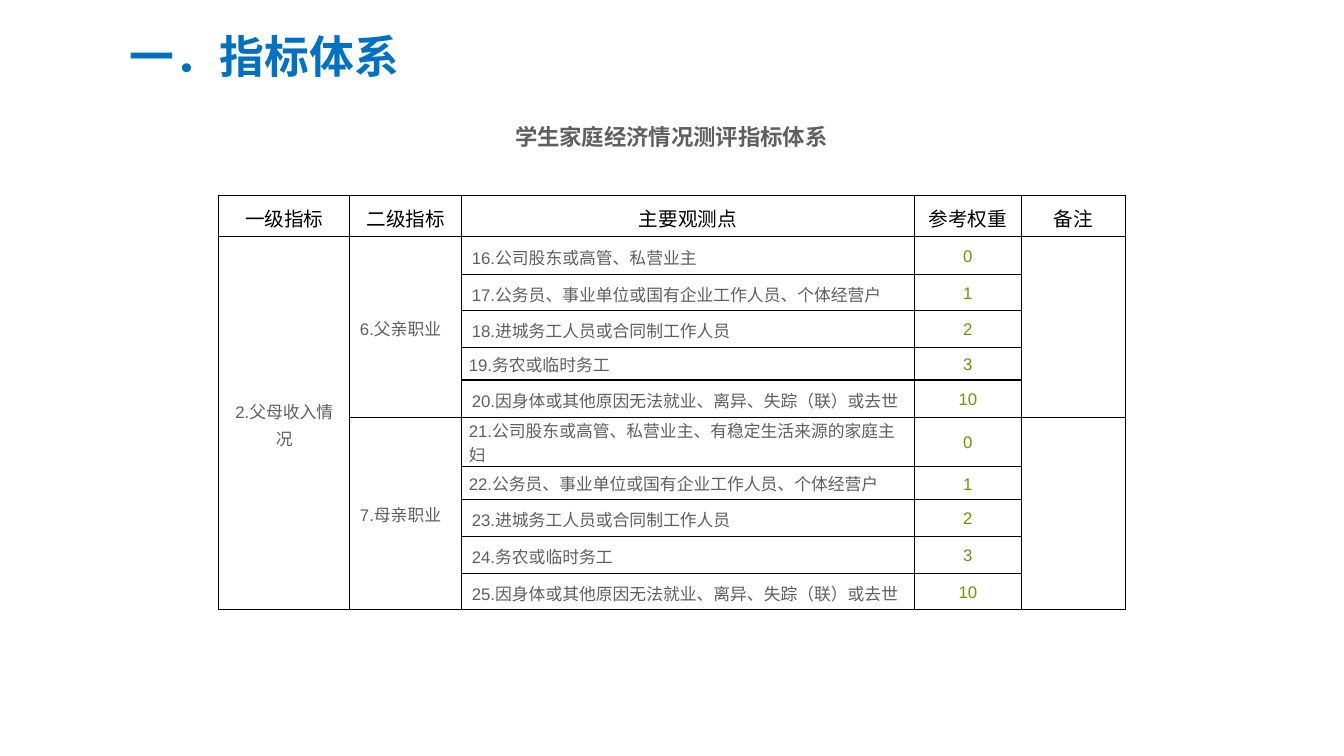
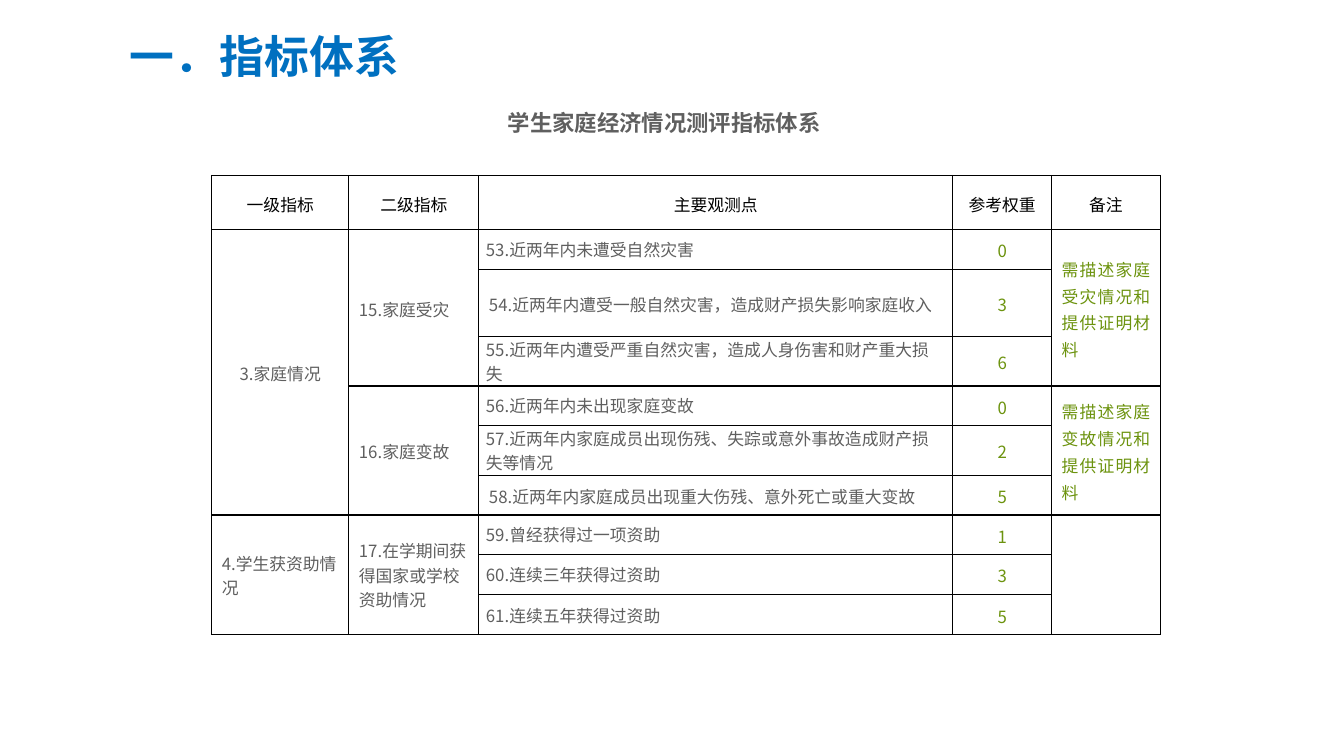
from collections import namedtuple

from lxml.etree import SubElement
from pptx import Presentation
from pptx.dml.color import RGBColor
from pptx.enum.text import MSO_ANCHOR, PP_ALIGN
from pptx.oxml.ns import qn
from pptx.util import Inches, Pt

BLUE = RGBColor(0x00, 0x70, 0xC0)
GRAY = RGBColor(0x5F, 0x5F, 0x5F)
GREEN = RGBColor(0x6C, 0x93, 0x0E)
BLACK = RGBColor(0, 0, 0)
CJK = "Noto Sans CJK SC"
LATIN = "Arial"

Style = namedtuple("Style", "align lead color tight", defaults=[False])
HEAD = Style(PP_ALIGN.CENTER, 1.1, BLACK)
MID = Style(PP_ALIGN.CENTER, 1.1, GRAY)
BODY = Style(PP_ALIGN.JUSTIFY, 1.1, GRAY)
SCORE = Style(PP_ALIGN.CENTER, 1.1, GREEN)
NOTE = Style(PP_ALIGN.JUSTIFY, 1.1, GREEN)
LEFT = Style(PP_ALIGN.LEFT, 1.0, GRAY)
TIGHT = Style(PP_ALIGN.LEFT, 1.0, GRAY, True)
COLUMNS = [MID, BODY, BODY, SCORE, NOTE]

TITLE = "一．指标体系"
CAPTION = "学生家庭经济情况测评指标体系"
HEADS = ["一级指标", "二级指标", "主要观测点", "参考权重", "备注"]

# None continues the cell above; a pair gives a cell its own style.
JOBS = [
    ["2.父母收入情况", "6.父亲职业", "16.公司股东或高管、私营业主", "0", ""],
    [None, None, "17.公务员、事业单位或国有企业工作人员、个体经营户", "1", None],
    [None, None, "18.进城务工人员或合同制工作人员", "2", None],
    [None, None, ("19.务农或临时务工", TIGHT), "3", None],
    [None, None, "20.因身体或其他原因无法就业、离异、失踪（联）或去世", "10", None],
    [None, "7.母亲职业",
     ("21.公司股东或高管、私营业主、有稳定生活来源的家庭主妇", TIGHT), "0", ""],
    [None, None,
     ("22.公务员、事业单位或国有企业工作人员、个体经营户", TIGHT), "1", None],
    [None, None, "23.进城务工人员或合同制工作人员", "2", None],
    [None, None, "24.务农或临时务工", "3", None],
    [None, None, "25.因身体或其他原因无法就业、离异、失踪（联）或去世", "10", None],
]
FAMILY = [
    ["3.家庭情况", "15.家庭受灾", ("53.近两年内未遭受自然灾害", TIGHT), "0",
     "需描述家庭受灾情况和提供证明材料"],
    [None, None, "54.近两年内遭受一般自然灾害，造成财产损失影响家庭收入", "3", None],
    [None, None,
     ("55.近两年内遭受严重自然灾害，造成人身伤害和财产重大损失", TIGHT), "6", None],
    [None, "16.家庭变故", ("56.近两年内未出现家庭变故", TIGHT), "0",
     "需描述家庭变故情况和提供证明材料"],
    [None, None,
     ("57.近两年内家庭成员出现伤残、失踪或意外事故造成财产损失等情况", TIGHT),
     "2", None],
    [None, None, "58.近两年内家庭成员出现重大伤残、意外死亡或重大变故", "5", None],
    [("4.学生获资助情况", LEFT), ("17.在学期间获得国家或学校资助情况", LEFT),
     ("59.曾经获得过一项资助", TIGHT), "1", ""],
    [None, None, ("60.连续三年获得过资助", TIGHT), "3", None],
    [None, None, ("61.连续五年获得过资助", TIGHT), "5", None],
]


def set_text(frame, text, size, face, color, bold=False):
    """Fill a frame with one paragraph and return that paragraph."""
    frame.text = text
    para = frame.paragraphs[0]
    for run in para.runs:
        font = run.font
        font.size, font.name, font.bold = Pt(size), face, bold
        font.color.rgb = color
        SubElement(run._r.get_or_add_rPr(), qn("a:ea"), typeface=CJK)
    return para


def add_title(slide):
    box = slide.shapes.add_textbox(
        Inches(1.19), Inches(0.24), Inches(4.92), Inches(0.8))
    box.text_frame.word_wrap = False
    set_text(box.text_frame, TITLE, 32, CJK, BLUE, True)


def add_caption(slide, left, top):
    box = slide.shapes.add_textbox(
        Inches(left), Inches(top), Inches(8.5), Inches(0.47))
    frame = box.text_frame
    frame.word_wrap = True
    frame.vertical_anchor = MSO_ANCHOR.MIDDLE
    para = set_text(frame, CAPTION, 16, LATIN, GRAY, True)
    para.alignment, para.line_spacing = PP_ALIGN.CENTER, 0.9


def add_border(cell):
    props = cell._tc.get_or_add_tcPr()
    for side in "LRTB":
        line = SubElement(props, qn(f"a:ln{side}"), w=str(Pt(1)))
        fill = SubElement(line, qn("a:solidFill"))
        SubElement(fill, qn("a:srgbClr"), val=str(BLACK))


def fill_cell(cell, text, style, size, face):
    cell.vertical_anchor = MSO_ANCHOR.MIDDLE
    if style.tight:
        cell.margin_left = cell.margin_right = Inches(0.07)
        cell.margin_top = cell.margin_bottom = 0
    para = set_text(cell.text_frame, text, size, face, style.color)
    para.alignment, para.line_spacing = style.align, style.lead


def merge_down(table, rows):
    """Join each cell with the None cells below it."""
    for col in range(len(HEADS)):
        starts = [i for i, row in enumerate(rows) if row[col] is not None]
        for start, end in zip(starts, starts[1:] + [len(rows)]):
            if end - start > 1:
                table.cell(start, col).merge(table.cell(end - 1, col))


def add_grid(slide, left, top, widths, heights, body, head_size, face):
    rows = [[(text, HEAD) for text in HEADS]] + body
    table = slide.shapes.add_table(
        len(rows), len(HEADS), Inches(left), Inches(top),
        Inches(sum(widths)), Inches(sum(heights))).table
    table.first_row = table.horz_banding = False
    for column, width in zip(table.columns, widths):
        column.width = Inches(width)
    for line, height in zip(table.rows, heights):
        line.height = Inches(height)
    for i, row in enumerate(rows):
        for j, item in enumerate(row):
            cell = table.cell(i, j)
            add_border(cell)
            cell.fill.background()
            if item is None:
                continue
            text, style = item if isinstance(item, tuple) else (item, COLUMNS[j])
            size, name = (12, face) if i else (head_size, CJK)
            fill_cell(cell, text, style, size, name)
    merge_down(table, rows)


def main():
    deck = Presentation()
    deck.slide_width, deck.slide_height = Inches(13.33), Inches(7.5)
    blank = deck.slide_layouts[6]

    jobs = deck.slides.add_slide(blank)
    add_caption(jobs, 2.41, 1.14)
    add_grid(jobs, 2.17, 1.94, [1.3, 1.11, 4.49, 1.06, 1.03],
             [0.41, 0.37, 0.36, 0.37, 0.32, 0.37, 0.49, 0.33, 0.36, 0.37, 0.36],
             JOBS, 14, LATIN)
    add_title(jobs)

    family = deck.slides.add_slide(blank)
    add_caption(family, 2.34, 1)
    add_grid(family, 2.1, 1.74, [1.36, 1.29, 4.7, 0.98, 1.08],
             [0.54, 0.39, 0.67, 0.49, 0.39, 0.5, 0.39, 0.39, 0.4, 0.4],
             FAMILY, 12, CJK)
    add_title(family)

    deck.save("out.pptx")


if __name__ == "__main__":
    main()
